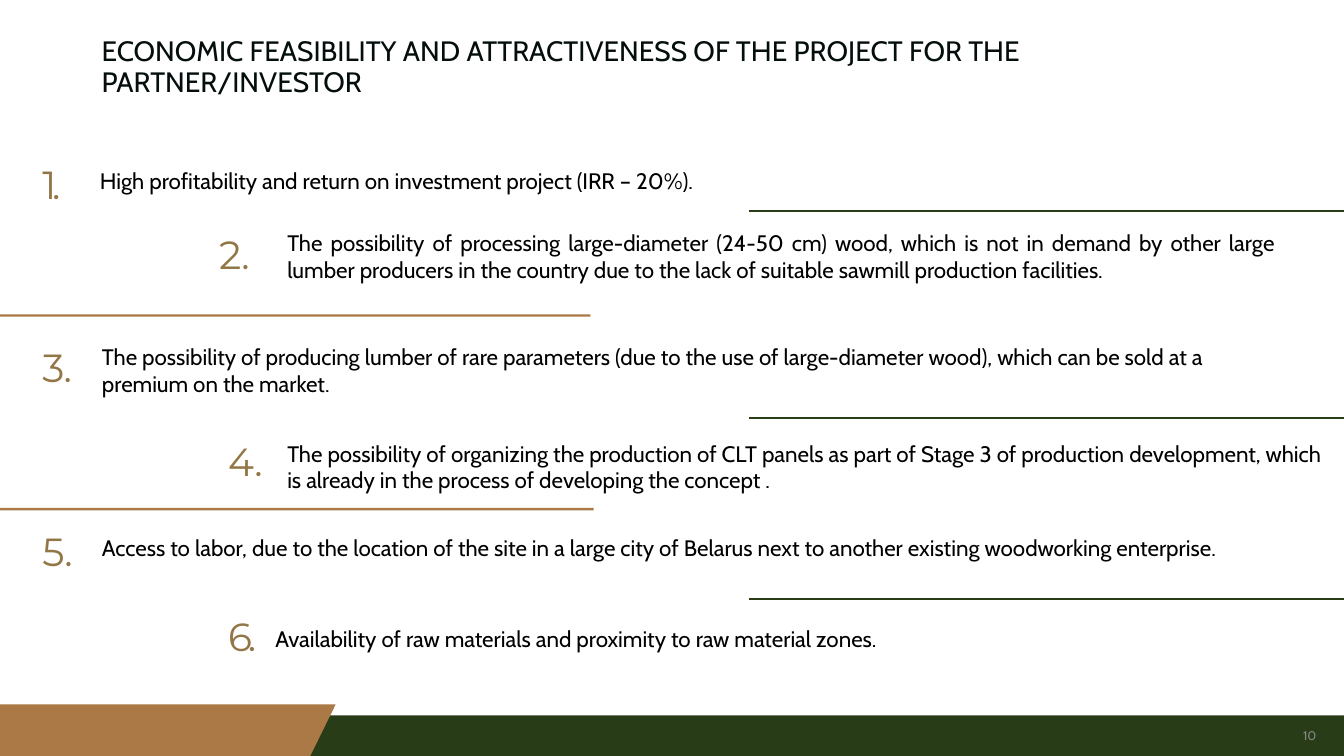
import pptx
import pptx.util
import pptx.dml.color
import pptx.enum.shapes
import pptx.enum.text

Cm, Pt = pptx.util.Cm, pptx.util.Pt
RGBColor = pptx.dml.color.RGBColor
ALIGN = pptx.enum.text.PP_ALIGN

GREEN = RGBColor(0x28, 0x3D, 0x17)
TAN = RGBColor(0xAB, 0x79, 0x46)
GOLD = RGBColor(0x92, 0x76, 0x46)
INK = RGBColor(0x04, 0x0E, 0x0D)
BLACK = RGBColor(0, 0, 0)
GREY = RGBColor(0x87, 0x87, 0x87)
WIDTH, HEIGHT = 33.87, 19.05

# number box, letter spacing in points, text box, alignment, text
REASONS = [
    ((1.04, 4.01, 0.86, 1.24), -3.2, (2.49, 4.19, 17.07, 0.71), ALIGN.LEFT,
     "High profitability and return on investment project (IRR – 20%)."),
    ((5.49, 5.77, 1.07, 1.24), -0.2, (7.21, 5.74, 24.94, 1.4), ALIGN.JUSTIFY,
     "The possibility of processing large-diameter (24-50 cm) wood, which is not in demand "
     "by other large lumber producers in the country due to the lack of suitable sawmill "
     "production facilities."),
    ((1.04, 8.61, 1.02, 1.24), -0.6, (2.54, 8.61, 29.41, 1.4), ALIGN.LEFT,
     "The possibility of producing lumber of rare parameters (due to the use of "
     "large-diameter wood), which can be sold at a premium on the market."),
    ((5.72, 11, 1.07, 1.24), -0.2, (7.21, 11.05, 26.11, 1.4), ALIGN.LEFT,
     "The possibility of organizing the production of CLT panels as part of Stage 3 of "
     "production development, which is already in the process of developing the concept ."),
    ((1.04, 13.26, 1.07, 1.24), -0.2, (2.54, 13.44, 30.2, 0.71), ALIGN.LEFT,
     "Access to labor, due to the location of the site in a large city of Belarus next to "
     "another existing woodworking enterprise."),
    ((5.72, 15.39, 0.86, 1.24), -3.2, (6.91, 15.72, 16.15, 0.71), ALIGN.LEFT,
     "Availability of raw materials and proximity to raw material zones."),
]
TAN_RULES = [(7.92, 14.88), (12.8, 14.96)]  # top, width
GREEN_RULES = [5.31, 10.54, 15.09]
GREEN_RULE_LEFT = 18.87


def add_text(s, box, text, size, color, font="Cabin", top=0.03, indent=0.03,
             before=0.9, align=ALIGN.LEFT, spacing=0, line=None):
    tf = s.shapes.add_textbox(*map(Cm, box)).text_frame
    tf.word_wrap = True
    tf.margin_left = tf.margin_right = tf.margin_bottom = 0
    tf.margin_top = Cm(top)
    p = tf.paragraphs[0]
    p.alignment = align
    p.space_before = Pt(before)
    if line:
        p.line_spacing = Pt(line)
    p._p.get_or_add_pPr().set("marL", str(Cm(indent)))
    r = p.add_run()
    r.text = text
    r.font.name, r.font.size = font, Pt(size)
    r.font.color.rgb = color
    if spacing:
        r._r.get_or_add_rPr().set("spc", str(round(spacing * 100)))


def paint(sp, color):
    sp.shadow.inherit = False
    sp.fill.solid()
    sp.fill.fore_color.rgb = color
    sp.line.fill.background()


def add_bar(s, box, color):
    sp = s.shapes.add_shape(pptx.enum.shapes.MSO_SHAPE.RECTANGLE, *map(Cm, box))
    paint(sp, color)


def add_title(s, box):
    add_text(s, box, "ECONOMIC FEASIBILITY AND ATTRACTIVENESS OF THE PROJECT FOR THE "
             "PARTNER/INVESTOR", 20, INK, top=0.33, indent=0.3, before=3.8, line=21.6)


def add_footer(s, box):
    left, top, width, height = box
    # Green band
    add_bar(s, (left + 7.47, top + 0.28, width - 7.47, height - 0.28), GREEN)
    # Slanted tan tab
    bottom = top + height
    corners = [(left + 8.46, top), (left, top), (left, bottom), (left + 7.82, bottom)]
    points = [(Cm(x), Cm(y)) for x, y in corners]
    fb = s.shapes.build_freeform(*points[0])
    fb.add_line_segments(points[1:], close=True)
    paint(fb.convert_to_shape(), TAN)
    # Page number
    add_text(s, (left + width - 1.13, top + 0.59, 0.56, 0.43), "10", 9, GREY,
             top=0, indent=0.1, before=0.3, spacing=-0.2)


def add_rules(s, left, right):
    for y, width in TAN_RULES:
        add_bar(s, (left, y, width, 0.06), TAN)
    for y in GREEN_RULES:
        c = s.shapes.add_connector(pptx.enum.shapes.MSO_CONNECTOR.STRAIGHT,
                                   Cm(GREEN_RULE_LEFT), Cm(y), Cm(right), Cm(y))
        c.line.color.rgb = GREEN
        c.line.width = Pt(1.56)
        c._element.spPr.append(pptx.oxml.parse_xml(
            '<a:effectLst xmlns:a="http://schemas.openxmlformats.org/drawingml/2006/main"/>'))


def add_reasons(s):
    for i, (number_box, spacing, text_box, align, text) in enumerate(REASONS, 1):
        add_text(s, number_box, f"{i}.", 28, GOLD, font="Montserrat", spacing=spacing)
        add_text(s, text_box, text, 16, BLACK, align=align)


def main():
    prs = pptx.Presentation()
    prs.slide_width, prs.slide_height = Cm(WIDTH), Cm(HEIGHT)
    s = prs.slides.add_slide(prs.slide_layouts[6])
    add_title(s, (2.26, 0.61, 27.33, 1.91))
    add_footer(s, (0, HEIGHT - 1.3, WIDTH, 1.3))
    add_rules(s, 0, WIDTH)
    add_reasons(s)
    prs.save("out.pptx")


if __name__ == "__main__":
    main()
